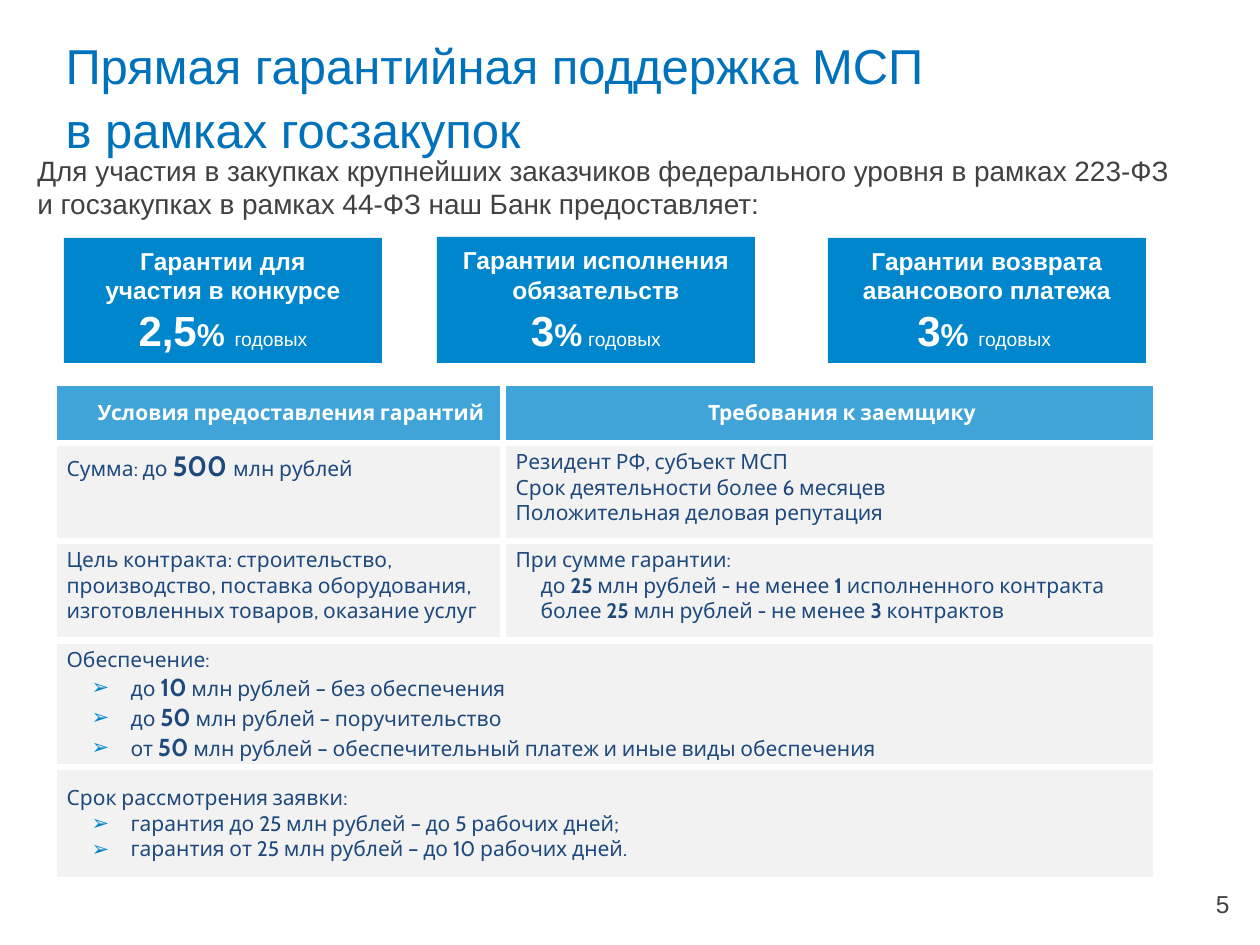
"""Build the slide on direct guarantee support for small businesses."""
from dataclasses import dataclass

from lxml import etree
from pptx import Presentation
from pptx.dml.color import RGBColor
from pptx.enum.shapes import MSO_SHAPE
from pptx.enum.text import MSO_ANCHOR, PP_ALIGN
from pptx.oxml.ns import qn
from pptx.util import Emu, Pt

RECTANGLE = MSO_SHAPE.RECTANGLE
TOP, MIDDLE = MSO_ANCHOR.TOP, MSO_ANCHOR.MIDDLE
LEFT, CENTER, RIGHT = PP_ALIGN.LEFT, PP_ALIGN.CENTER, PP_ALIGN.RIGHT
PX_PER_INCH = 126
EMU_PER_PX = 914400 / PX_PER_INCH


@dataclass(frozen=True)
class Theme:
    title: str = "0072BC"
    intro: str = "414141"
    number: str = "404040"
    accent: str = "0086CD"
    panel: str = "F2F2F2"
    ink: str = "1F497D"
    white: str = "FFFFFF"
    font: str = "Arial"
    table_font: str = "Cabin"
    title_size: int = 28
    intro_size: int = 16
    label_size: int = 14
    rate_size: int = 24
    percent_size: int = 18
    unit_size: int = 11
    table_size: int = 12
    limit_size: int = 14
    sum_size: int = 16
    border: float = 4.5


THEME = Theme()


def px(value):
    return Emu(round(value * EMU_PER_PX))


def bold(text, size=None):
    return text, size, True


def add_element(parent, tag, **attributes):
    return etree.SubElement(parent, qn(tag), attributes)


def add_bullet(para):
    properties = para._p.get_or_add_pPr()
    color = add_element(properties, "a:buClr")
    add_element(color, "a:srgbClr", val=THEME.accent)
    add_element(properties, "a:buFont", typeface=THEME.font)
    add_element(properties, "a:buChar", char="➢")


def write_para(para, spans, size, color, font=THEME.font, strong=False,
               align=LEFT, indent=0, hanging=0, bullet=False):
    """Write plain text or (text, size, bold) spans into a paragraph."""
    para.alignment = align
    if indent:
        properties = para._p.get_or_add_pPr()
        properties.set("marL", str(px(indent)))
        properties.set("indent", str(-px(hanging)))
    if bullet:
        add_bullet(para)
    for part in [spans] if isinstance(spans, str) else spans:
        text, own_size, own_bold = (part, None, strong) if isinstance(part, str) else part
        span = para.add_run()
        span.text = text
        span.font.name = font
        span.font.size = Pt(own_size or size)
        span.font.bold = own_bold
        span.font.color.rgb = RGBColor.from_string(color)


def next_para(frame, index):
    return frame.add_paragraph() if index else frame.paragraphs[0]


def add_title(page, text):
    title = page.shapes.title
    title.left, title.top, title.width, title.height = map(px, (53, 25, 1133, 120))
    frame = title.text_frame
    frame.text = text
    frame.word_wrap = True
    frame.vertical_anchor = TOP
    para = frame.paragraphs[0]
    para.alignment = LEFT
    para.line_spacing = 1.08
    para.font.name = THEME.font
    para.font.size = Pt(THEME.title_size)
    para.font.color.rgb = RGBColor.from_string(THEME.title)


def add_label(page, area, text, anchor=TOP, **style):
    box = page.shapes.add_textbox(*map(px, area))
    box.text_frame.word_wrap = True
    box.text_frame.vertical_anchor = anchor
    write_para(box.text_frame.paragraphs[0], text, **style)


def add_rate_card(page, left, top, lines, rate, gap, unit):
    """Add a blue card with a heading and a yearly rate."""
    card = page.shapes.add_shape(RECTANGLE, px(left), px(top), px(318), px(363 - top))
    card.shadow.inherit = False
    card.fill.solid()
    card.fill.fore_color.rgb = RGBColor.from_string(THEME.accent)
    card.line.fill.background()
    frame = card.text_frame
    frame.word_wrap = True
    frame.vertical_anchor = MIDDLE
    frame.margin_left = frame.margin_right = px(10)
    frame.margin_top = frame.margin_bottom = px(5)
    rate_line = [bold(rate, THEME.rate_size), bold("%", THEME.percent_size),
                 bold(" ", gap), (unit, THEME.unit_size, False)]
    for index, spans in enumerate([*lines, rate_line]):
        write_para(next_para(frame, index), spans, size=THEME.label_size,
                   color=THEME.white, strong=True, align=CENTER)


def style_cell(cell, fill, alpha=None):
    """Give a cell its fill and thick white borders."""
    cell.fill.solid()
    cell.fill.fore_color.rgb = RGBColor.from_string(fill)
    properties = cell._tc.get_or_add_tcPr()
    if alpha:
        color = properties.find(qn("a:solidFill")).find(qn("a:srgbClr"))
        add_element(color, "a:alpha", val=str(alpha * 1000))
    for index, side in enumerate(("a:lnL", "a:lnR", "a:lnT", "a:lnB")):
        line = add_element(properties, side, w=str(Pt(THEME.border)))
        add_element(add_element(line, "a:solidFill"), "a:srgbClr", val=THEME.white)
        properties.insert(index, line)


def fill_cell(cell, paras, anchor=TOP, color=THEME.ink, **style):
    """Write paragraphs, each given as spans with optional formatting."""
    cell.vertical_anchor = anchor
    for index, (spans, extra) in enumerate(paras):
        write_para(next_para(cell.text_frame, index), spans, size=THEME.table_size,
                   color=color, font=THEME.table_font, **style, **extra)


def add_terms_table(page, headers, rows):
    """Add the table; a row with a single cell spans both columns."""
    widths, heights = (449, 653), (60, 98, 100, 126, 113)
    table = page.shapes.add_table(len(heights), len(widths), px(54), px(383),
                                  px(sum(widths)), px(sum(heights))).table
    table.first_row = table.horz_banding = False
    for column, width in zip(table.columns, widths):
        column.width = px(width)
    for row, height in zip(table.rows, heights):
        row.height = px(height)
    for column, header in enumerate(headers):
        cell = table.cell(0, column)
        style_cell(cell, THEME.accent, alpha=75)
        fill_cell(cell, [(header, {})], MIDDLE, THEME.white,
                  strong=True, align=CENTER, indent=25)
    for number, contents in enumerate(rows, 1):
        merged = len(contents) == 1
        if merged:
            table.cell(number, 0).merge(table.cell(number, 1))
        for column in range(len(widths)):
            style_cell(table.cell(number, column), THEME.panel)
        for column, paras in enumerate(contents):
            fill_cell(table.cell(number, column), paras, MIDDLE if merged else TOP)


def plain(*spans):
    return spans, {}


def indented(*spans):
    return spans, {"indent": 25}


def listed(*spans):
    return spans, {"indent": 64, "hanging": 39, "bullet": True}


def main():
    deck = Presentation()
    deck.slide_width, deck.slide_height = px(1260), px(945)
    page = deck.slides.add_slide(deck.slide_layouts[5])
    add_label(page, (948, 879, 294, 50), "5", MIDDLE, size=14,
              color=THEME.number, align=RIGHT)
    add_title(page, "Прямая гарантийная поддержка МСП\vв рамках госзакупок")
    add_label(page, (25, 147, 1160, 81),
              "Для участия в закупках крупнейших заказчиков федерального уровня в рамках "
              "223-ФЗ и госзакупках в рамках 44-ФЗ наш Банк предоставляет:",
              size=THEME.intro_size, color=THEME.intro)
    cards = [
        (64, 238, ["Гарантии для", "участия в конкурсе"], "2,5", 20, "годовых"),
        (437, 237, ["Гарантии исполнения обязательств"], "3", 12, "годовых"),
        (828, 238, ["Гарантии возврата", "авансового платежа"], "3", 20, "годовых "),
    ]
    for card in cards:
        add_rate_card(page, *card)
    limits = [("до ", "10", "без обеспечения"), ("до ", "50", "поручительство"),
              ("от ", "50", "обеспечительный платеж и иные виды обеспечения")]
    rows = [
        [[plain("Сумма: до ", bold("500 ", THEME.sum_size), "млн рублей")],
         [plain("Резидент РФ, субъект МСП"),
          plain("Срок деятельности более 6 месяцев"),
          plain("Положительная деловая репутация")]],
        [[plain("Цель контракта: строительство, производство, поставка оборудования, "
                "изготовленных товаров, оказание услуг")],
         [plain("При сумме гарантии:")]
         + [indented(start, bold("25"), " млн рублей - не менее ", bold(count), end)
            for start, count, end in (("до ", "1", " исполненного контракта"),
                                      ("более ", "3", " контрактов"))]],
        [[plain("Обеспечение:")]
         + [listed(start, bold(limit, THEME.limit_size), f" млн рублей – {security}")
            for start, limit, security in limits]],
        [[plain("Срок рассмотрения заявки:"),
          listed("гарантия до 25 млн рублей – до 5 рабочих дней;"),
          listed("гарантия от 25 млн рублей – до 10 рабочих дней.")]],
    ]
    add_terms_table(page, ("Условия предоставления гарантий", "Требования к заемщику"), rows)
    deck.save("out.pptx")


if __name__ == "__main__":
    main()
